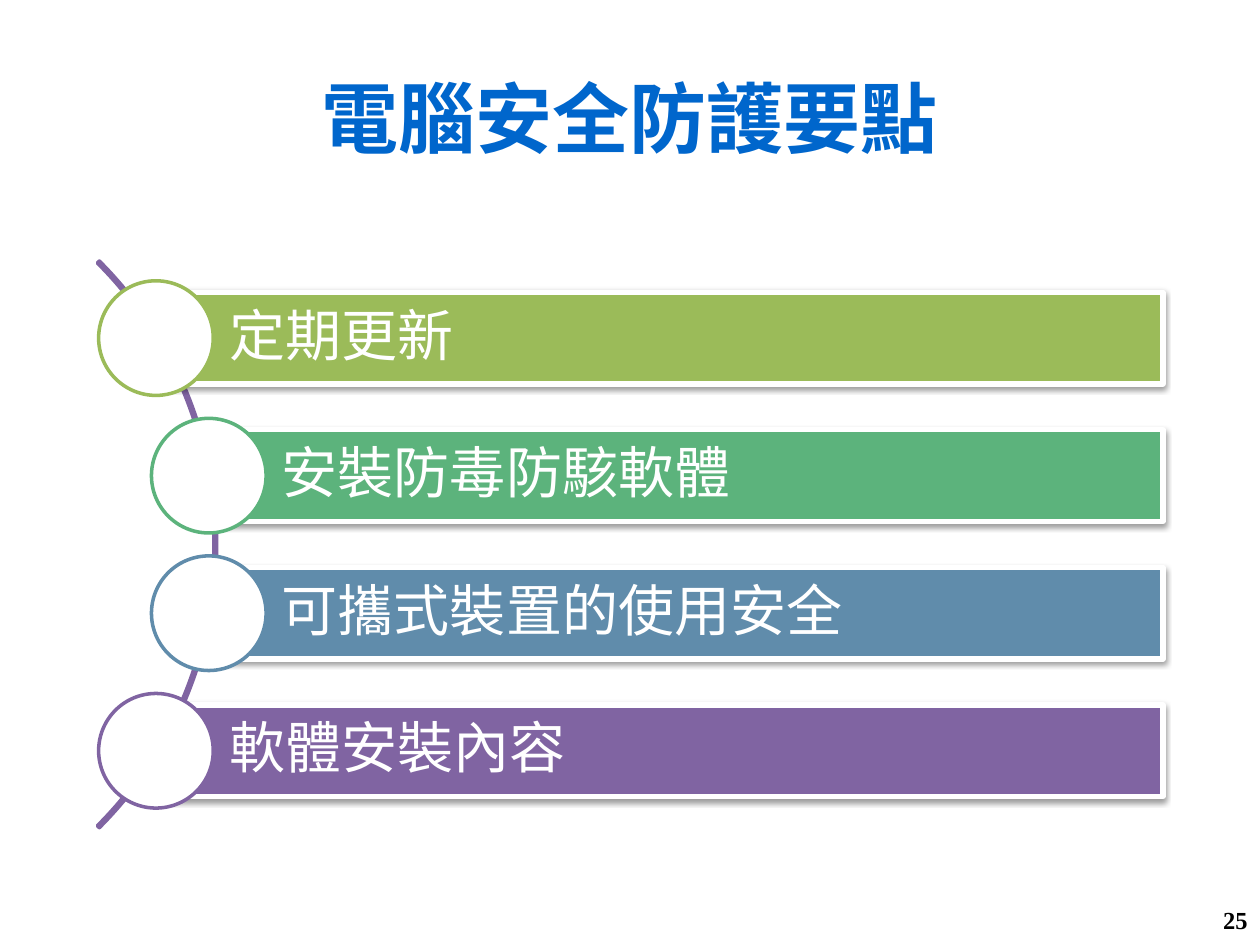
"""Build the slide listing the key points of computer security."""
from lxml import etree
from pptx import Presentation
from pptx.dml.color import RGBColor
from pptx.enum.shapes import MSO_SHAPE
from pptx.enum.text import MSO_ANCHOR, PP_ALIGN
from pptx.oxml.ns import qn
from pptx.util import Pt

RECTANGLE, OVAL, BLOCK_ARC = MSO_SHAPE.RECTANGLE, MSO_SHAPE.OVAL, MSO_SHAPE.BLOCK_ARC
MIDDLE = MSO_ANCHOR.MIDDLE
LEFT, CENTER, RIGHT = PP_ALIGN.LEFT, PP_ALIGN.CENTER, PP_ALIGN.RIGHT

WHITE = RGBColor(0xFF, 0xFF, 0xFF)
BLACK = RGBColor(0x00, 0x00, 0x00)
BLUE = RGBColor(0x00, 0x66, 0xCC)
LIME = RGBColor(0x9B, 0xBB, 0x59)
GREEN = RGBColor(0x5C, 0xB3, 0x7C)
STEEL = RGBColor(0x60, 0x8C, 0xAB)
PURPLE = RGBColor(0x80, 0x64, 0xA2)

FONT = "Times New Roman"
TITLE = "電腦安全防護要點"
PAGE_NUMBER = "25"
OUTER_X, INNER_X = 89.1, 119.3
POINTS = [
    ("定期更新", LIME, OUTER_X),
    ("安裝防毒防駭軟體", GREEN, INNER_X),
    ("可攜式裝置的使用安全", STEEL, INNER_X),
    ("軟體安裝內容", PURPLE, OUTER_X),
]

ARC_X, ARC_Y, ARC_SIZE = -105.1, 311.1, 457.9
ARC_ADJUSTMENTS = (189, 27, 0.0035)
PITCH, BAR_HEIGHT, BAR_RIGHT, CIRCLE_SIZE = 78.6, 52.4, 664.6, 65.5
BAR_INSET = 41.8


def write(shape, text, align, **font_format):
    frame = shape.text_frame
    frame.word_wrap = True
    frame.vertical_anchor = MIDDLE
    paragraph = frame.paragraphs[0]
    paragraph.alignment = align
    run = paragraph.add_run()
    run.text = text
    color = font_format.pop("color")
    for key, value in {"name": FONT, **font_format}.items():
        setattr(run.font, key, value)
    run.font.color.rgb = color
    return paragraph


def add_outlined(slide, kind, box, fill, line, width):
    shape = slide.shapes.add_shape(kind, *map(Pt, box))
    shape.shadow.inherit = False
    if fill is None:
        shape.fill.background()
    else:
        shape.fill.solid()
        shape.fill.fore_color.rgb = fill
    shape.line.color.rgb = line
    shape.line.width = Pt(width)
    return shape


def add_drop_shadow(shape):
    effects = shape.fill._xPr.find(qn("a:effectLst"))
    shadow = etree.SubElement(effects, qn("a:outerShdw"), blurRad=str(Pt(3.1)),
                              dist=str(Pt(1.6)), dir="5400000", rotWithShape="0")
    color = etree.SubElement(shadow, qn("a:srgbClr"), val=str(BLACK))
    etree.SubElement(color, qn("a:alpha"), val="38000")


def add_point(slide, index, text, color, x):
    y = ARC_Y + (index - (len(POINTS) - 1) / 2) * PITCH
    bar = add_outlined(slide, RECTANGLE, (x, y - BAR_HEIGHT / 2, BAR_RIGHT - x, BAR_HEIGHT),
                       color, WHITE, 3)
    add_drop_shadow(bar)
    bar.text_frame.margin_left = Pt(BAR_INSET)
    write(bar, text, LEFT, size=Pt(32), color=WHITE).line_spacing = 0.9
    radius = CIRCLE_SIZE / 2
    add_outlined(slide, OVAL, (x - radius, y - radius, CIRCLE_SIZE, CIRCLE_SIZE),
                 WHITE, color, 2)


def main():
    deck = Presentation()
    deck.slide_width, deck.slide_height = Pt(720), Pt(540)
    slide = deck.slides.add_slide(deck.slide_layouts[6])

    title = slide.shapes.add_textbox(Pt(36), Pt(21.6), Pt(648), Pt(90))
    write(title, TITLE, CENTER, size=Pt(44), bold=True, color=BLUE)

    arc = add_outlined(slide, BLOCK_ARC,
                       (ARC_X - ARC_SIZE / 2, ARC_Y - ARC_SIZE / 2, ARC_SIZE, ARC_SIZE),
                       None, PURPLE, 2)
    for index, value in enumerate(ARC_ADJUSTMENTS):
        arc.adjustments[index] = value

    for index, point in enumerate(POINTS):
        add_point(slide, index, *point)

    number = slide.shapes.add_textbox(Pt(552), Pt(511.2), Pt(168), Pt(28.8))
    write(number, PAGE_NUMBER, RIGHT, size=Pt(14), bold=True, color=BLACK)
    deck.save("out.pptx")


if __name__ == "__main__":
    main()
